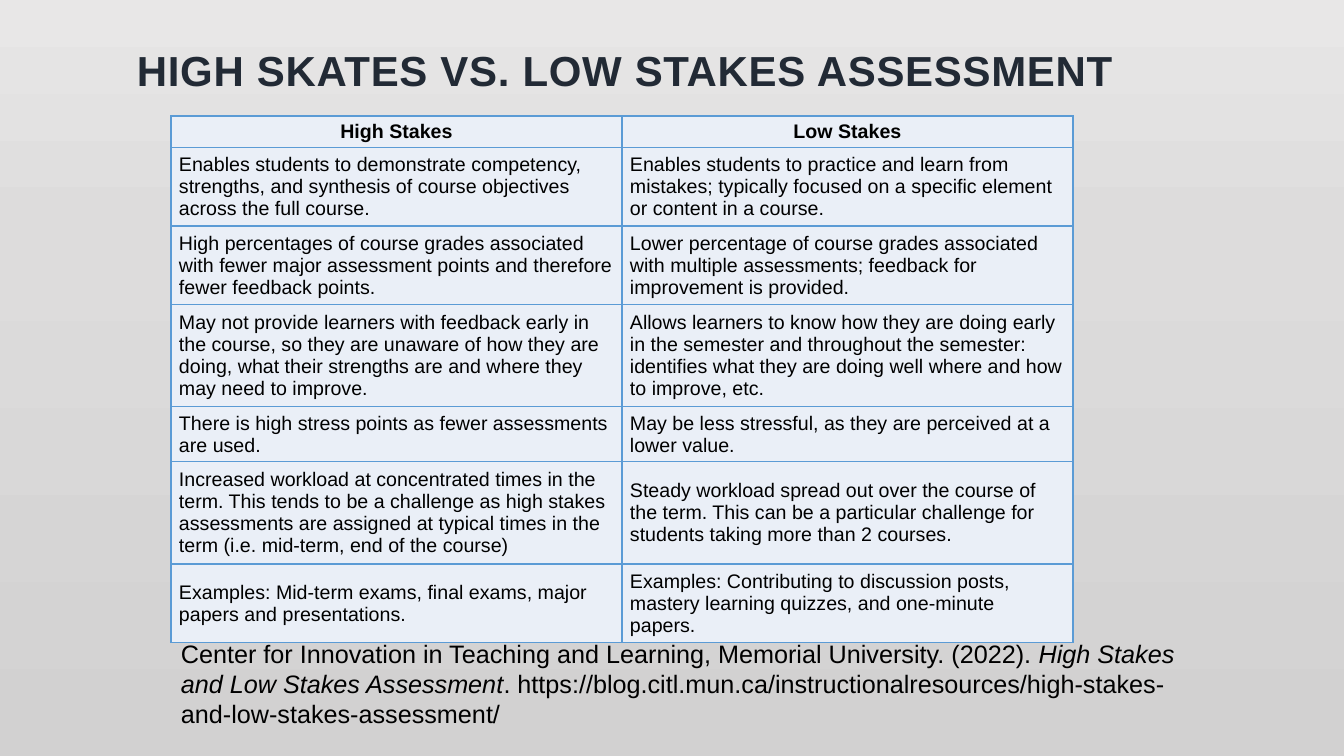
from pptx import Presentation
from pptx.dml.color import RGBColor as RGB
from pptx.enum.text import MSO_ANCHOR as Anchor, PP_ALIGN as Align
from pptx.oxml import parse_xml
from pptx.oxml.ns import nsdecls
from pptx.util import Pt

TITLE = "HIGH SKATES VS. LOW STAKES ASSESSMENT"
ROWS = [
    (31, "High Stakes", "Low Stakes"),
    (78, "Enables students to demonstrate competency, strengths, and synthesis "
         "of course objectives across the full course.",
     "Enables students to practice and learn from mistakes; typically focused "
     "on a specific element or content in a course."),
    (78, "High percentages of course grades associated with fewer major "
         "assessment points and therefore fewer feedback points.",
     "Lower percentage of course grades associated with multiple assessments; "
     "feedback for improvement is provided."),
    (102, "May not provide learners with feedback early in the course, so they "
          "are unaware of how they are doing, what their strengths are and "
          "where they may need to improve.",
     "Allows learners to know how they are doing early in the semester and "
     "throughout the semester: identifies what they are doing well where and "
     "how to improve, etc."),
    (54, "There is high stress points as fewer assessments are used.",
     "May be less stressful, as they are perceived at a lower value."),
    (102, "Increased workload at concentrated times in the term. This tends to "
          "be a challenge as high stakes assessments are assigned at typical "
          "times in the term (i.e. mid-term, end of the course)",
     "Steady workload spread out over the course of the term. This can be a "
     "particular challenge for students taking more than 2 courses."),
    (74, "Examples: Mid-term exams, final exams, major papers and presentations.",
     "Examples: Contributing to discussion posts, mastery learning quizzes, "
     "and one-minute papers."),
]
# (text, italic)
SOURCE = [
    ("Center for Innovation in Teaching and Learning, Memorial University. (2022). ", False),
    ("High Stakes and Low Stakes Assessment", True),
    (". https://blog.citl.mun.ca/instructionalresources/"
     "high-stakes-and-low-stakes-assessment/", False),
]
COLORS = {"title": "222A35", "text": "000000", "cell": "EAEFF7", "rule": "5B9BD5"}
SHADES = [(0, "E8E7E7"), (31, "DDDCDC"), (100, "D2D1D1")]
FONT = "Arial"
COL_W = 451


def px(n):
    return round(n * 914400 / 100.8)


def add_run(para, text, size, color="text", bold=False, italic=False):
    run = para.add_run()
    run.text = text
    font = run.font
    font.name, font.size, font.bold, font.italic = FONT, Pt(size), bold, italic
    font.color.rgb = RGB.from_string(COLORS[color])
    return run


def add_box(slide, left, top, width, height, anchor):
    frame = slide.shapes.add_textbox(px(left), px(top), px(width), px(height)).text_frame
    frame.word_wrap = True
    frame.vertical_anchor = anchor
    return frame.paragraphs[0]


def shade(slide):
    """Fill the background from top to bottom."""
    stops = "".join(f'<a:gs pos="{pos * 1000}"><a:srgbClr val="{color}"/></a:gs>'
                    for pos, color in SHADES)
    slide.element.cSld.insert(0, parse_xml(
        f'<p:bg {nsdecls("p", "a")}><p:bgPr><a:gradFill rotWithShape="1">'
        f'<a:gsLst>{stops}</a:gsLst><a:lin ang="5400000" scaled="0"/></a:gradFill>'
        '<a:effectLst/></p:bgPr></p:bg>'))


def rule(cell):
    """Draw a line on all four sides of a cell."""
    props = cell._tc.get_or_add_tcPr()
    for i, side in enumerate("LRTB"):
        props.insert(i, parse_xml(
            f'<a:ln{side} {nsdecls("a")} w="{Pt(1)}"><a:solidFill>'
            f'<a:srgbClr val="{COLORS["rule"]}"/></a:solidFill></a:ln{side}>'))


def add_grid(slide):
    high = sum(row[0] for row in ROWS)
    grid = slide.shapes.add_table(len(ROWS), 2, px(171), px(116),
                                  px(2 * COL_W), px(high)).table
    grid.first_row = grid.horz_banding = False
    for col in grid.columns:
        col.width = px(COL_W)
    for r, (height, *texts) in enumerate(ROWS):
        grid.rows[r].height = px(height)
        for c, text in enumerate(texts):
            cell = grid.cell(r, c)
            cell.fill.solid()
            cell.fill.fore_color.rgb = RGB.from_string(COLORS["cell"])
            cell.vertical_anchor = Anchor.MIDDLE
            cell.margin_left = cell.margin_right = px(8)
            cell.margin_top = cell.margin_bottom = px(4)
            para = cell.text_frame.paragraphs[0]
            para.alignment = Align.LEFT if r else Align.CENTER
            add_run(para, text, 14, bold=r == 0)
            rule(cell)


def main():
    deck = Presentation()
    deck.slide_width, deck.slide_height = px(1344), px(756)
    slide = deck.slides.add_slide(deck.slide_layouts[6])
    shade(slide)
    para = add_box(slide, 127, -26, 1165, 126, Anchor.BOTTOM)
    head = add_run(para, TITLE, 30, "title", bold=True)
    head.font._element.set("spc", "50")
    add_grid(slide)
    para = add_box(slide, 171, 633, 1046, 102, Anchor.TOP)
    for text, italic in SOURCE:
        add_run(para, text, 18, italic=italic)
    deck.save("out.pptx")


if __name__ == "__main__":
    main()
